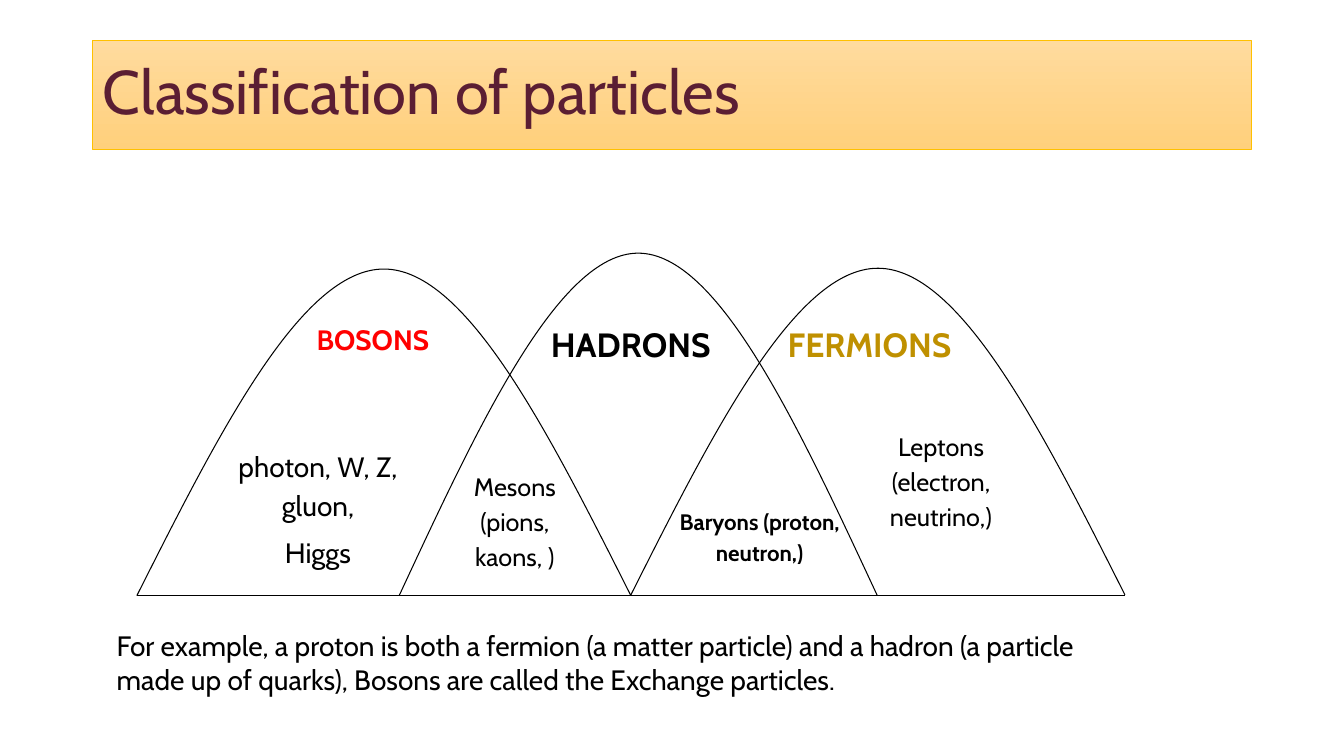
"""Build a slide that classifies particles with three overlapping arches."""
import lxml.etree
import pptx
import pptx.dml.color
import pptx.enum.shapes
import pptx.enum.text
import pptx.oxml.ns
import pptx.util

Cm = pptx.util.Cm
Pt = pptx.util.Pt
RGBColor = pptx.dml.color.RGBColor
ALIGN = pptx.enum.text.PP_ALIGN
ANCHOR = pptx.enum.text.MSO_ANCHOR
qn = pptx.oxml.ns.qn

FONT = "Cabin"
BLACK = RGBColor(0x00, 0x00, 0x00)
RED = RGBColor(0xFF, 0x00, 0x00)
OCHRE = RGBColor(0xBF, 0x90, 0x00)
PLUM = RGBColor(0x5B, 0x1E, 0x33)
GOLD = RGBColor(0xFF, 0xC0, 0x00)
PEACH = RGBColor(0xFF, 0xDB, 0x9E)
AMBER = RGBColor(0xFF, 0xD0, 0x7C)

BASE = 15.01
ARCHES = [(3.45, 12.45, 6.78, BASE), (15.9, 12.45, 6.76, 14.99), (10.06, 12.05, 6.38, BASE)]
LABELS = [
    (7.73, 7.88, 4.22, 1.65, ["BOSONS"], 20, RED, True, ALIGN.LEFT),
    (13.56, 7.89, 4.67, 1.65, ["HADRONS"], 24, BLACK, True, ALIGN.CENTER),
    (19.39, 7.89, 5.05, 1.65, ["FERMIONS"], 24, OCHRE, True, ALIGN.CENTER),
    (5.59, 11.08, 4.85, 4.34, ["photon, W, Z, gluon,", "Higgs"], 20, BLACK, False, ALIGN.CENTER),
    (11.22, 11.64, 3.51, 4.45, ["Mesons (pions, kaons, )"], 18, BLACK, False, ALIGN.CENTER),
    (16.67, 12.58, 4.95, 2.79, ["Baryons (proton, neutron,)"], 16, BLACK, True, ALIGN.CENTER),
    (21.43, 10.64, 4.57, 4.37, ["Leptons (electron, neutrino,)"], 18, BLACK, False, ALIGN.CENTER),
]
EXAMPLE = (
    "For example, a proton is both a fermion (a matter particle) and a hadron "
    "(a particle made up of quarks), Bosons are called the Exchange particles."
)


def add_run(p, text, size, color, bold=False):
    """Append one formatted run to a paragraph."""
    r = p.add_run()
    r.text = text
    r.font.name = FONT
    r.font.size = Pt(size)
    r.font.bold = bold
    r.font.color.rgb = color


def add_title(s, text):
    """Add the title bar with its gradient."""
    sp = s.shapes.add_shape(
        pptx.enum.shapes.MSO_SHAPE.RECTANGLE, Cm(2.34), Cm(1.02), Cm(29.2), Cm(2.74))
    sp.shadow.inherit = False
    sp.fill.gradient()
    sp.fill.gradient_angle = 270
    for stop, color in zip(sp.fill.gradient_stops, (PEACH, AMBER)):
        stop.color.rgb = color
    sp.line.color.rgb = GOLD
    sp.line.width = Pt(0.5)
    tf = sp.text_frame
    tf.word_wrap = True
    tf.vertical_anchor = ANCHOR.MIDDLE
    p = tf.paragraphs[0]
    p.alignment = ALIGN.LEFT
    p.line_spacing = 0.9
    add_run(p, text, 44, PLUM)


def add_arch(s, left, width, top, foot):
    """Add an open arch made of two cubic curves."""
    fb = s.shapes.build_freeform(Cm(left), Cm(foot))
    fb.add_line_segments(
        [(Cm(left + width / 2), Cm(top)), (Cm(left + width), Cm(foot))], close=False)
    sp = fb.convert_to_shape()
    sp.shadow.inherit = False
    sp.fill.background()
    sp.line.color.rgb = BLACK
    sp.line.width = Pt(0.75)
    height = foot - top
    curves = [
        [(width / 6, height / 2), (width / 3, 0), (width / 2, 0)],
        [(width * 2 / 3, 0), (width * 5 / 6, height / 2), (width, height)],
    ]
    for segment, curve in zip(list(sp._element.iter(qn("a:lnTo"))), curves):
        bezier = lxml.etree.Element(qn("a:cubicBezTo"))
        for x, y in curve:
            lxml.etree.SubElement(bezier, qn("a:pt"), x=str(int(Cm(x))), y=str(int(Cm(y))))
        segment.getparent().replace(segment, bezier)


def add_base_line(s, x1, x2):
    """Add the straight line under the arches."""
    c = s.shapes.add_connector(
        pptx.enum.shapes.MSO_CONNECTOR.STRAIGHT, Cm(x1), Cm(BASE), Cm(x2), Cm(BASE))
    c.line.color.rgb = BLACK
    c.line.width = Pt(0.75)
    lxml.etree.SubElement(c._element.spPr, qn("a:effectLst"))


def add_text(s, left, top, width, height, lines, size, color, bold, align, spacing=1.15, gap=3):
    """Add a wrapped text box with one paragraph per line."""
    tf = s.shapes.add_textbox(Cm(left), Cm(top), Cm(width), Cm(height)).text_frame
    tf.word_wrap = True
    for i, line in enumerate(lines):
        p = tf.add_paragraph() if i else tf.paragraphs[0]
        p.alignment = align
        p.line_spacing = spacing
        p.space_before = p.space_after = Pt(gap)
        add_run(p, line, size, color, bold)
    return tf


def main():
    """Build and save the slide."""
    prs = pptx.Presentation()
    prs.slide_width, prs.slide_height = Cm(33.87), Cm(19.05)
    s = prs.slides.add_slide(prs.slide_layouts[6])
    add_title(s, "Classification of particles")
    add_base_line(s, 3.45, 28.35)
    for arch in ARCHES:
        add_arch(s, *arch)
    for label in LABELS:
        add_text(s, *label)
    tf = add_text(s, 2.69, 13.82, 26.24, 4.62, [EXAMPLE], 20, BLACK, False, ALIGN.LEFT, 1.0, 0)
    tf.vertical_anchor = ANCHOR.BOTTOM
    tf.margin_bottom = Cm(0.9)
    prs.save("out.pptx")


if __name__ == "__main__":
    main()
